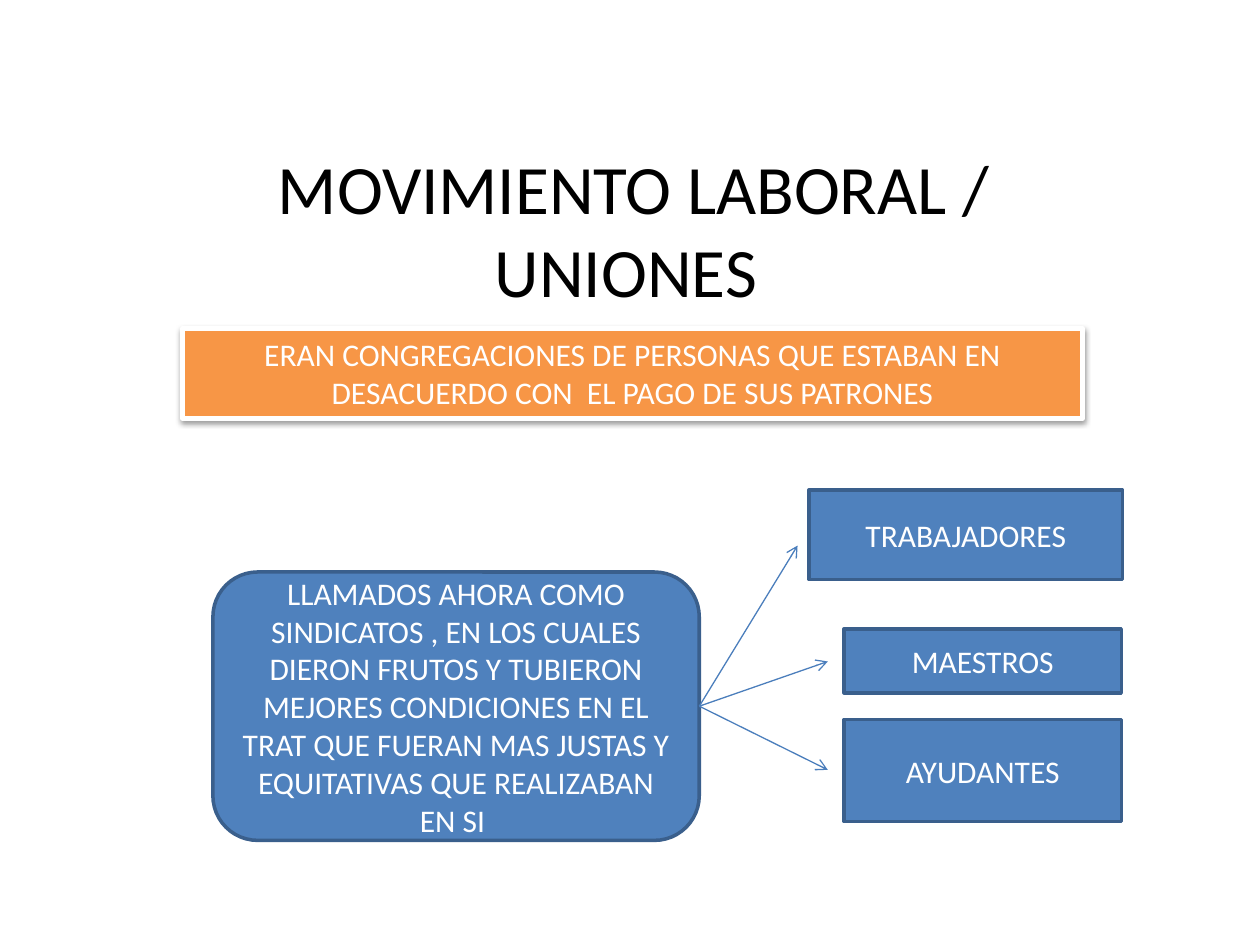
from lxml import etree
from pptx import Presentation
from pptx.dml.color import RGBColor
from pptx.enum.shapes import MSO_CONNECTOR, MSO_SHAPE
from pptx.enum.text import MSO_ANCHOR, PP_ALIGN
from pptx.oxml.ns import qn
from pptx.util import Inches, Pt

RECTANGLE = MSO_SHAPE.RECTANGLE
ROUNDED = MSO_SHAPE.ROUNDED_RECTANGLE
STRAIGHT = MSO_CONNECTOR.STRAIGHT
CENTER = PP_ALIGN.CENTER
MIDDLE, TOP = MSO_ANCHOR.MIDDLE, MSO_ANCHOR.TOP
RIGHT_SIDE = 3
FONT = "Calibri"
COLORS = {
    "black": "000000",
    "white": "FFFFFF",
    "orange": "F79646",
    "blue": "4F81BD",
    "border": "3A5F8C",
    "arrow": "4B7EBC",
}


def color(name):
    return RGBColor.from_string(COLORS[name])


def write_text(shape, text, size, font_color, anchor=MIDDLE):
    frame = shape.text_frame
    frame.word_wrap = True
    frame.vertical_anchor = anchor
    paragraph = frame.paragraphs[0]
    paragraph.text = text
    paragraph.alignment = CENTER
    paragraph.font.name = FONT
    paragraph.font.size = Pt(size)
    paragraph.font.color.rgb = color(font_color)


def add_title(slide, text, left, top, width, height):
    title = slide.shapes.add_textbox(
        Inches(left), Inches(top), Inches(width), Inches(height))
    write_text(title, text, 39.6, "black")


def add_box(slide, text, left, top, width, height, kind=RECTANGLE,
            fill="blue", border="border", border_width=2, anchor=MIDDLE):
    box = slide.shapes.add_shape(
        kind, Inches(left), Inches(top), Inches(width), Inches(height))
    box.shadow.inherit = False
    box.fill.solid()
    box.fill.fore_color.rgb = color(fill)
    box.line.color.rgb = color(border)
    box.line.width = Pt(border_width)
    write_text(box, text, 18, "white", anchor)
    return box


def add_drop_shadow(shape):
    effects = shape.element.spPr.find(qn("a:effectLst"))
    shadow = etree.SubElement(
        effects, qn("a:outerShdw"), blurRad=str(Pt(3.1)), dist=str(Pt(1.6)),
        dir="5400000", rotWithShape="0")
    shade = etree.SubElement(shadow, qn("a:srgbClr"), val=COLORS["black"])
    etree.SubElement(shade, qn("a:alpha"), val="38000")


def add_arrow(slide, source, end_x, end_y):
    """Draw an arrow from the right side of source to a free point."""
    arrow = slide.shapes.add_connector(
        STRAIGHT, source.left + source.width, source.top + source.height // 2,
        Inches(end_x), Inches(end_y))
    arrow.begin_connect(source, RIGHT_SIDE)
    arrow.line.color.rgb = color("arrow")
    arrow.line.width = Pt(0.75)
    etree.SubElement(arrow.line._get_or_add_ln(), qn("a:tailEnd"), type="arrow")
    etree.SubElement(arrow.element.spPr, qn("a:effectLst"))


def main():
    presentation = Presentation()
    presentation.slide_width = Inches(10)
    presentation.slide_height = Inches(7.5)
    slide = presentation.slides.add_slide(presentation.slide_layouts[6])

    add_title(slide, "MOVIMIENTO LABORAL / UNIONES ", 1.22, 1.15, 7.62, 1.32)
    definition = add_box(
        slide,
        "ERAN CONGREGACIONES DE PERSONAS QUE ESTABAN EN DESACUERDO CON  EL "
        "PAGO DE SUS PATRONES",
        1.45, 2.61, 7.14, 0.71, fill="orange", border="white",
        border_width=3, anchor=TOP)
    add_drop_shadow(definition)
    unions = add_box(
        slide,
        "LLAMADOS AHORA COMO SINDICATOS , EN LOS CUALES DIERON FRUTOS Y "
        "TUBIERON MEJORES CONDICIONES EN EL TRAT QUE FUERAN MAS JUSTAS Y "
        "EQUITATIVAS QUE REALIZABAN EN SI ",
        1.69, 4.54, 3.86, 2.13, kind=ROUNDED)

    members = [
        # text, box left, top, width, height, arrow tip x, y
        ("TRABAJADORES", 6.42, 3.89, 2.49, 0.71, 6.33, 4.33),
        ("MAESTROS", 6.7, 4.99, 2.2, 0.51, 6.57, 5.25),
        ("AYUDANTES", 6.7, 5.71, 2.2, 0.81, 6.57, 6.11),
    ]
    for text, left, top, width, height, tip_x, tip_y in members:
        add_arrow(slide, unions, tip_x, tip_y)
        add_box(slide, text, left, top, width, height)

    presentation.save("out.pptx")


if __name__ == "__main__":
    main()
